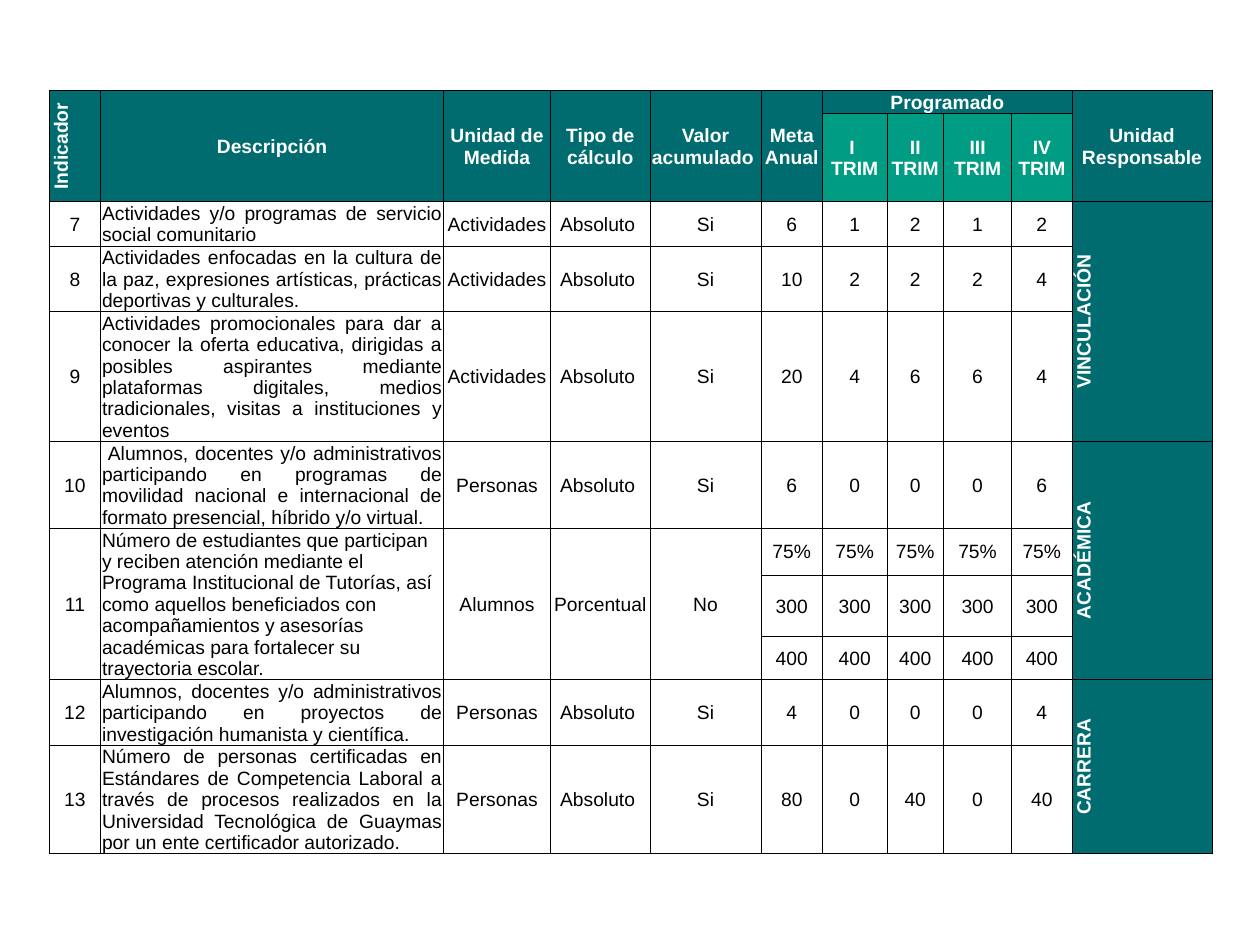
from lxml import etree
from pptx import Presentation
from pptx.dml.color import RGBColor
from pptx.enum.text import MSO_ANCHOR, PP_ALIGN
from pptx.oxml.ns import qn
from pptx.util import Inches, Pt

TEAL, GREEN, WHITE, BLACK = "006C6F", "009C84", "FFFFFF", "000000"


def color(hex_code):
    return RGBColor.from_string(hex_code)


def add_borders(cell):
    properties = cell._tc.get_or_add_tcPr()
    for position, side in enumerate(("a:lnL", "a:lnR", "a:lnT", "a:lnB")):
        line = etree.Element(qn(side), w=str(Pt(0.5)))
        fill = etree.SubElement(line, qn("a:solidFill"))
        etree.SubElement(fill, qn("a:srgbClr"), val=BLACK)
        properties.insert(position, line)


column_widths = [0.41, 2.72, 0.85, 0.79, 0.88, 0.49, 0.51, 0.45, 0.54, 0.48, 1.11]
row_heights = [0.17, 0.7, 0.34, 0.51, 1.03, 0.68, 0.37, 0.49, 0.34, 0.51, 0.86]

header = ["Indicador", "Descripción", "Unidad de Medida", "Tipo de cálculo",
          "Valor acumulado ", "Meta Anual", "Programado", "", "", "",
          "Unidad Responsable"]
quarters = [""] * 6 + ["I \nTRIM", "II TRIM", "III TRIM", "IV TRIM", ""]
indicators = [
    ["7", "Actividades y/o programas de servicio social comunitario",
     "Actividades", "Absoluto ", "Si", "6", "1", "2", "1", "2", "VINCULACIÓN"],
    ["8", "Actividades enfocadas en la cultura de la paz, expresiones artísticas, "
     "prácticas deportivas y culturales.",
     "Actividades", "Absoluto ", "Si", "10", "2", "2", "2", "4", ""],
    ["9", "Actividades promocionales para dar a conocer la oferta educativa, "
     "dirigidas a posibles aspirantes mediante plataformas digitales, medios "
     "tradicionales, visitas a instituciones y eventos",
     "Actividades", "Absoluto ", "Si", "20", "4", "6", "6", "4", ""],
    ["10", " Alumnos, docentes y/o administrativos participando en programas de "
     "movilidad nacional e internacional de formato presencial, híbrido y/o virtual. ",
     "Personas", "Absoluto ", "Si", "6", "0", "0", "0", "6", "ACADÉMICA"],
    ["11", "Número de estudiantes que participan y reciben atención mediante el "
     "Programa Institucional de Tutorías, así como aquellos beneficiados con "
     "acompañamientos y asesorías académicas para fortalecer su trayectoria escolar.",
     "Alumnos", "Porcentual", "No"] + ["75%"] * 5 + [""],
    [""] * 5 + ["300"] * 5 + [""],
    [""] * 5 + ["400"] * 5 + [""],
    ["12", "Alumnos, docentes y/o administrativos participando en proyectos de "
     "investigación humanista y científica.",
     "Personas", "Absoluto ", "Si", "4", "0", "0", "0", "4", "CARRERA"],
    ["13", "Número de personas certificadas en Estándares de Competencia Laboral a "
     "través de procesos realizados en la Universidad Tecnológica de Guaymas por un "
     "ente certificador autorizado.",
     "Personas", "Absoluto ", "Si", "80", "0", "40", "0", "40", ""],
]
rows = [header, quarters] + indicators

prs = Presentation()
prs.slide_width, prs.slide_height = Inches(10), Inches(7.5)
slide = prs.slides.add_slide(prs.slide_layouts[6])

table = slide.shapes.add_table(
    len(rows), len(header), Inches(0.39), Inches(0.72),
    Inches(sum(column_widths)), Inches(sum(row_heights))).table
table.first_row = table.horz_banding = False
for column, width in zip(table.columns, column_widths):
    column.width = Inches(width)
for row, height in zip(table.rows, row_heights):
    row.height = Inches(height)

# Each merge is first row, first column, last row, last column
header_merges = [(0, c, 1, c) for c in (0, 1, 2, 3, 4, 5, 10)] + [(0, 6, 0, 9)]
tutoring_merges = [(6, c, 8, c) for c in range(5)]
unit_merges = [(2, 10, 4, 10), (5, 10, 8, 10), (9, 10, 10, 10)]
for top, left, bottom, right in header_merges + tutoring_merges + unit_merges:
    table.cell(top, left).merge(table.cell(bottom, right))

for r, texts in enumerate(rows):
    for c, text in enumerate(texts):
        cell = table.cell(r, c)
        is_header = r < 2
        is_unit = c == 10 and not is_header
        emphasized = is_header or is_unit

        cell.margin_left = cell.margin_right = cell.margin_top = Inches(0.01)
        cell.margin_bottom = 0
        cell.vertical_anchor = MSO_ANCHOR.MIDDLE
        if emphasized:
            cell.fill.solid()
            is_quarter = r == 1 and 6 <= c <= 9
            cell.fill.fore_color.rgb = color(GREEN if is_quarter else TEAL)
        else:
            cell.fill.background()
        add_borders(cell)
        if is_unit or text == "Indicador":
            cell._tc.get_or_add_tcPr().set("vert", "vert270")

        if c != 1 or is_header:
            alignment = PP_ALIGN.CENTER
        elif texts[0] == "11":
            alignment = PP_ALIGN.LEFT
        else:
            alignment = PP_ALIGN.JUSTIFY

        frame = cell.text_frame
        for i, line in enumerate(text.split("\n")):
            paragraph = frame.add_paragraph() if i else frame.paragraphs[0]
            paragraph.alignment = alignment
            if not line:
                continue
            run = paragraph.add_run()
            run.text = line
            run.font.name = "Arial"
            run.font.size = Pt(11)
            run.font.bold = emphasized
            run.font.color.rgb = color(WHITE if emphasized else BLACK)

prs.save("out.pptx")
